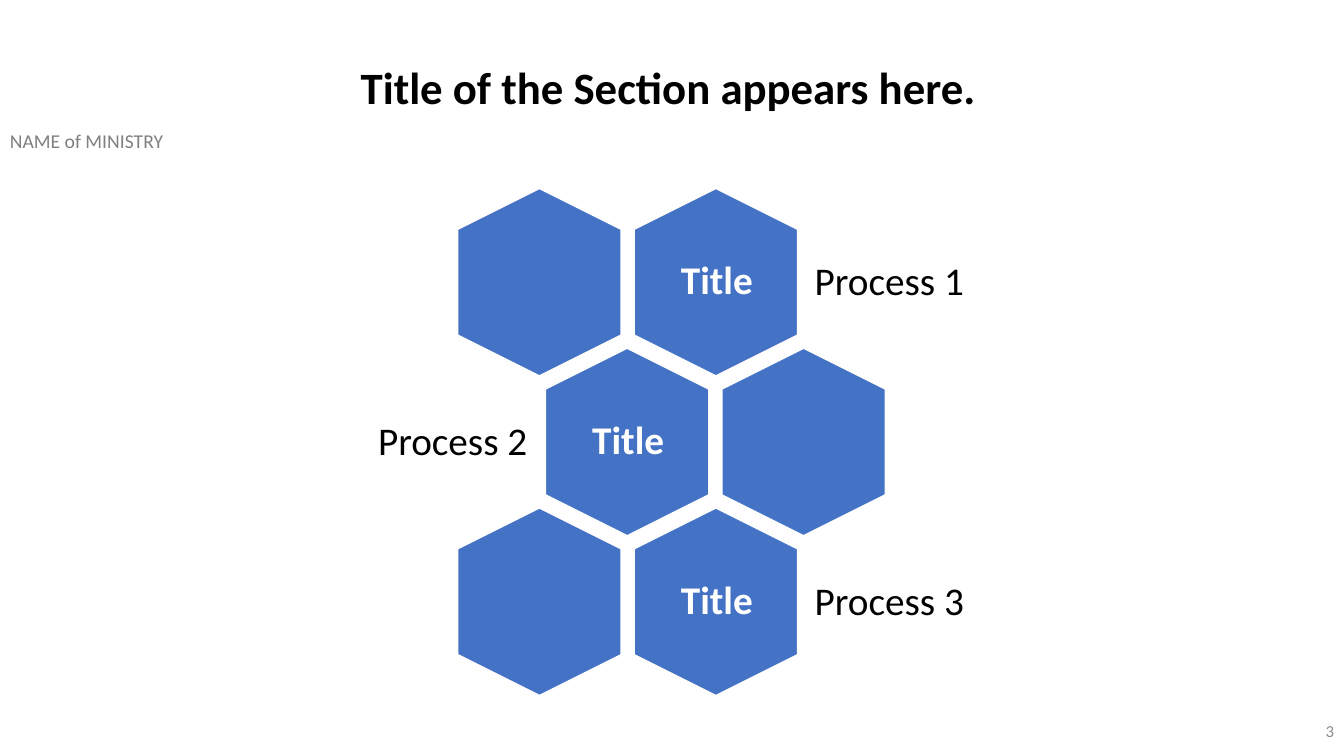
from pptx import Presentation
from pptx.dml.color import RGBColor
from pptx.enum.shapes import MSO_SHAPE as Shape
from pptx.enum.text import MSO_ANCHOR as Anchor, MSO_AUTO_SIZE as AutoSize, PP_ALIGN as Align
from pptx.util import Inches, Pt


def color(code):
    return RGBColor.from_string(code)


class Page:
    """Holds the style and the current slide."""

    FONT = "Calibri"
    BLACK, WHITE, BLUE = "000000", "FFFFFF", "4472C4"

    def __init__(self, deck):
        self.slide = deck.slides.add_slide(deck.slide_layouts[5])

    def fill_text(self, frame, text, size, code, align, anchor, bold=False, spacing=1.0):
        frame.text = text
        frame.word_wrap = True
        frame.auto_size = AutoSize.NONE
        frame.vertical_anchor = anchor
        para = frame.paragraphs[0]
        para.alignment = align
        para.line_spacing = spacing
        for span in para.runs:
            span.font.name = self.FONT
            span.font.size = Pt(size)
            span.font.bold = bold
            span.font.color.rgb = color(code)

    def title(self, text, left, top, width, height):
        box = self.slide.shapes.title
        box.left, box.top = Inches(left), Inches(top)
        box.width, box.height = Inches(width), Inches(height)
        self.fill_text(box.text_frame, text, 32, self.BLACK, Align.CENTER, Anchor.TOP, True, 0.9)

    def text(self, text, left, top, width, height, size, code, align,
             anchor=Anchor.MIDDLE, bold=False, spacing=1.0, inset=None):
        box = self.slide.shapes.add_textbox(
            Inches(left), Inches(top), Inches(width), Inches(height))
        frame = box.text_frame
        self.fill_text(frame, text, size, code, align, anchor, bold, spacing)
        if inset is not None:
            frame.margin_left = frame.margin_right = Inches(inset)
            frame.margin_top = frame.margin_bottom = Inches(inset)

    def label(self, text, left, top, width, height, code, align, bold=False):
        self.text(text, left, top, width, height, 28, code, align,
                  bold=bold, spacing=0.9, inset=0.12)

    def hexagon(self, left, top, width, height):
        shape = self.slide.shapes.add_shape(
            Shape.HEXAGON, Inches(left), Inches(top), Inches(width), Inches(height))
        shape.rotation = 90
        shape.adjustments[0] = 0.25
        shape.shadow.inherit = False
        shape.fill.solid()
        shape.fill.fore_color.rgb = color(self.BLUE)
        shape.line.color.rgb = color(self.WHITE)
        shape.line.width = Pt(1)

    def process_row(self, row, process):
        shifted = row % 2 == 1
        start = 4.42 + (0.87 if shifted else 0)
        top = 1.99 + row * 1.585
        titled = start if shifted else start + 1.75
        for column in range(2):
            self.hexagon(start + column * 1.75, top, 1.86, 1.62)
        self.label("Title", titled + 0.38, top + 0.17, 1.12, 1.28,
                   self.WHITE, Align.CENTER, True)
        if shifted:
            self.label(process, titled - 1.95, top + 0.26, 2.01, 1.12, self.BLACK, Align.RIGHT)
        else:
            self.label(process, titled + 1.79, top + 0.26, 2.08, 1.12, self.BLACK, Align.LEFT)


def main():
    deck = Presentation()
    deck.slide_width, deck.slide_height = Inches(13.33), Inches(7.5)
    page = Page(deck)
    page.title("Title of the Section appears here. ", 3.28, 0.6, 6.8, 1.07)
    page.text("NAME of MINISTRY", 0, 1.23, 2.9, 0.34, 14, "808080", Align.LEFT, Anchor.TOP)
    for row, process in enumerate(["Process 1", "Process 2", "Process 3"]):
        page.process_row(row, process)
    page.text("3", 10.35, 7.05, 2.98, 0.4, 12, "8C8C8C", Align.RIGHT)
    deck.save("out.pptx")


if __name__ == "__main__":
    main()
